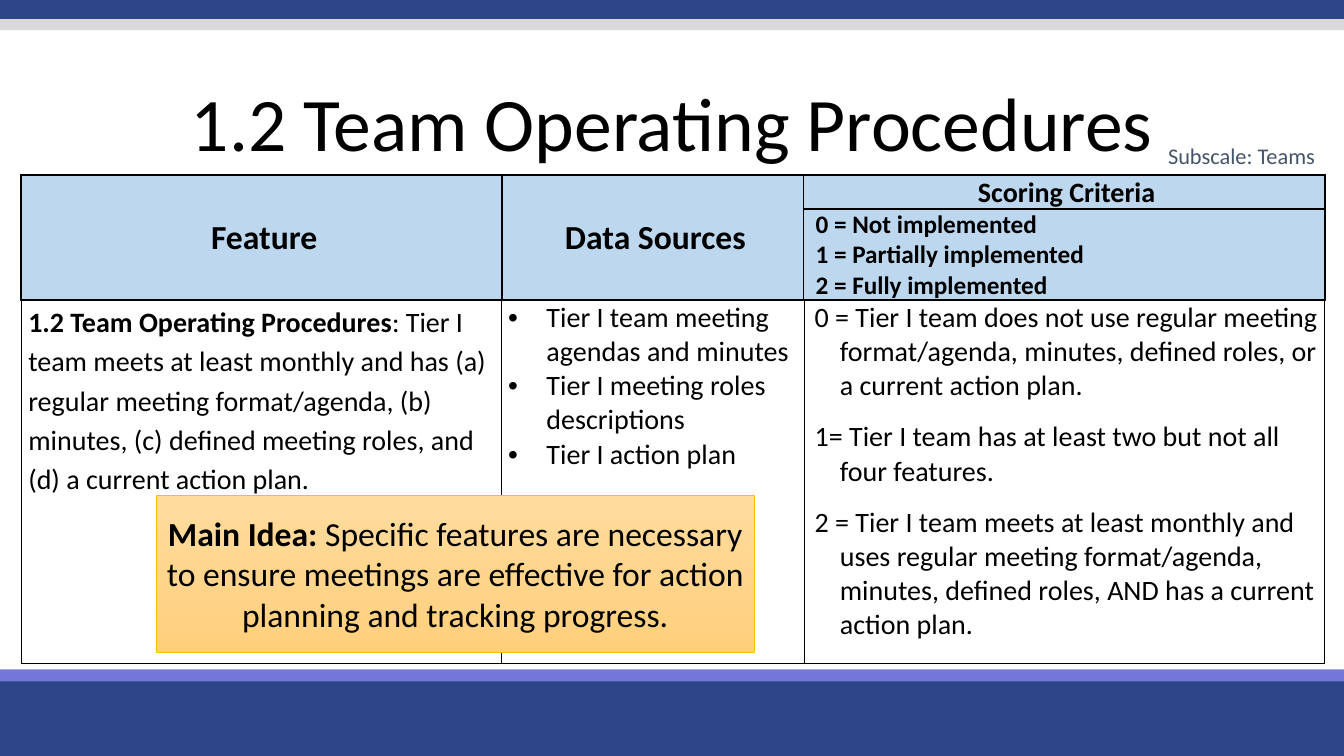
"""Build the slide on team operating procedures with its scoring table."""
from lxml import etree
from pptx import Presentation
from pptx.dml.color import RGBColor
from pptx.enum.shapes import MSO_SHAPE
from pptx.enum.text import MSO_ANCHOR, PP_ALIGN
from pptx.oxml.ns import qn
from pptx.util import Inches, Pt

RECTANGLE = MSO_SHAPE.RECTANGLE
TOP, MIDDLE = MSO_ANCHOR.TOP, MSO_ANCHOR.MIDDLE
LEFT, CENTER, RIGHT = PP_ALIGN.LEFT, PP_ALIGN.CENTER, PP_ALIGN.RIGHT
NAVY = RGBColor(0x2E, 0x44, 0x88)
VIOLET = RGBColor(0x74, 0x76, 0xDA)
SILVER = RGBColor(0xD9, 0xD9, 0xD9)
BLACK = RGBColor(0, 0, 0)
WHITE = RGBColor(0xFF, 0xFF, 0xFF)
SKY = RGBColor(0xBD, 0xD7, 0xEE)
SLATE = RGBColor(0x44, 0x54, 0x6A)
GOLD = RGBColor(0xFF, 0xC0, 0)
PEACH = RGBColor(0xFF, 0xDB, 0x9E)
APRICOT = RGBColor(0xFF, 0xD0, 0x7C)
FONT = "Calibri"
SLIDE_WIDTH, SLIDE_HEIGHT = Inches(13.33), Inches(7.5)
TABLE_LEFT = 1.58
HEADING_INDENT = (0.36, -0.31)
BULLET_INDENT = (0.38, -0.38)
SCORE_INDENT = (0.28, -0.25)

BANDS = [
    (89.33, 10.67, NAVY),
    (88.53, 1.6, VIOLET),
    (0, 2.53, NAVY),
    (2.53, 1.47, SILVER),
]
LEVELS = ["0 = Not implemented", "1 = Partially implemented", "2 = Fully implemented"]
FEATURE = [
    ("1.2 Team Operating Procedures", True),
    (": Tier I team meets at least monthly and has (a) regular meeting format/agenda, "
     "(b) minutes, (c) defined meeting roles, and (d) a current action plan.", False),
]
SOURCES = [
    "Tier I team meeting agendas and minutes",
    "Tier I meeting roles descriptions",
    "Tier I action plan",
]
SCORES = [
    "0 = Tier I team does not use regular meeting format/agenda, minutes, defined roles, "
    "or a current action plan.",
    "1= Tier I team has at least two but not all four features.",
    "2 = Tier I team meets at least monthly and uses regular meeting format/agenda, "
    "minutes, defined roles, AND has a current action plan.",
]
MAIN_IDEA = [
    ("Main Idea: ", True),
    ("Specific features are necessary to ensure meetings are effective for action "
     "planning and tracking progress.", False),
]


def across(percent):
    """Turn a percentage of the slide's width into a length."""
    return round(SLIDE_WIDTH * percent / 100)


def down(percent):
    """Turn a percentage of the slide's height into a length."""
    return round(SLIDE_HEIGHT * percent / 100)


def place(left, top, width, height):
    """Turn four percentages into a position and a size."""
    return across(left), down(top), across(width), down(height)


def write(frame, lines, size, color=BLACK, bold=None, align=LEFT, indent=None,
          bullet=None, spacing=None, after=None):
    """Fill a text frame with lines, each a string or a list of (text, bold) runs."""
    for number, line in enumerate(lines):
        paragraph = frame.add_paragraph() if number else frame.paragraphs[0]
        if indent:
            properties = paragraph._p.get_or_add_pPr()
            properties.set("marL", str(Inches(indent[0])))
            properties.set("indent", str(Inches(indent[1])))
        if bullet:
            etree.SubElement(properties, qn("a:buFont")).set("typeface", "Arial")
            etree.SubElement(properties, qn("a:buChar")).set("char", bullet)
        paragraph.alignment = align
        if spacing:
            paragraph.line_spacing = spacing
        if after:
            paragraph.space_after = Pt(after)
        font = paragraph.font
        font.name, font.size, font.bold = FONT, Pt(size), bold
        font.color.rgb = color
        runs = [(line, None)] if isinstance(line, str) else line
        for text, weight in runs:
            run = paragraph.add_run()
            run.text = text
            if weight is not None:
                run.font.bold = weight


def add_band(slide, top, height, color):
    """Draw a plain stripe over the whole width of the slide."""
    band = slide.shapes.add_shape(RECTANGLE, *place(0, top, 100, height))
    band.shadow.inherit = False
    band.fill.solid()
    band.fill.fore_color.rgb = color
    band.line.fill.background()


def add_label(slide, box, text, size, **style):
    """Add a wrapping text box with one line."""
    frame = slide.shapes.add_textbox(*place(*box)).text_frame
    frame.word_wrap = True
    write(frame, [text], size, **style)


def style_cell(cell, fill, border):
    """Give a cell its borders, fill and margins."""
    properties = cell._tc.get_or_add_tcPr()
    for side in ("a:lnL", "a:lnR", "a:lnT", "a:lnB"):
        edge = etree.SubElement(properties, qn(side), w=str(Pt(border)))
        paint = etree.SubElement(edge, qn("a:solidFill"))
        etree.SubElement(paint, qn("a:srgbClr"), val=str(BLACK))
    cell.fill.solid()
    cell.fill.fore_color.rgb = fill
    cell.margin_left = cell.margin_right = Inches(0.07)
    cell.margin_top = cell.margin_bottom = 0


def add_grid(slide, top, columns, rows, fill, border):
    """Add a table whose columns and rows are shares of the slide."""
    box = place(TABLE_LEFT, top, sum(columns), sum(rows))
    table = slide.shapes.add_table(len(rows), len(columns), *box).table
    table.first_row = table.horz_banding = False
    for column, share in zip(table.columns, columns):
        column.width = across(share)
    for row, share in zip(table.rows, rows):
        row.height = down(share)
    for cell in table.iter_cells():
        style_cell(cell, fill, border)
    return table


def add_headings(slide):
    """Add the blue heading table with its merged cells."""
    table = add_grid(slide, 23.2, (35.78, 22.43, 38.78), (4.4, 11.2), SKY, 1.5)
    for column in range(2):
        table.cell(0, column).merge(table.cell(1, column))
    headings = [("Feature", 24), ("Data Sources", 24), ("Scoring Criteria", 20)]
    for column, (heading, size) in enumerate(headings):
        cell = table.cell(0, column)
        cell.vertical_anchor = MIDDLE
        write(cell.text_frame, [heading], size, bold=True, align=CENTER,
              indent=HEADING_INDENT)
    write(table.cell(1, 2).text_frame, LEVELS, 18, bold=True, indent=HEADING_INDENT)


def add_criteria(slide):
    """Add the table with the feature, its sources and its scores."""
    table = add_grid(slide, 39.73, (35.71, 22.58, 38.71), (48,), WHITE, 1)
    feature, sources, scores = (cell.text_frame for cell in table.iter_cells())
    write(feature, [FEATURE], 20, spacing=1.15)
    write(sources, SOURCES, 20, indent=BULLET_INDENT, bullet="•")
    write(scores, SCORES, 20, indent=SCORE_INDENT, after=12)


def add_main_idea(slide):
    """Add the shaded box with the main idea."""
    idea = slide.shapes.add_shape(RECTANGLE, *place(11.63, 65.47, 44.49, 20.8))
    idea.shadow.inherit = False
    idea.fill.gradient()
    idea.fill.gradient_angle = 270
    for stop, color in zip(idea.fill.gradient_stops, (PEACH, APRICOT)):
        stop.color.rgb = color
    idea.line.color.rgb = GOLD
    idea.line.width = Pt(0.5)
    idea.text_frame.vertical_anchor = MIDDLE
    idea.text_frame.word_wrap = True
    write(idea.text_frame, [MAIN_IDEA], 24, align=CENTER)


def main():
    """Build and save the slide."""
    deck = Presentation()
    deck.slide_width, deck.slide_height = SLIDE_WIDTH, SLIDE_HEIGHT
    slide = deck.slides.add_slide(deck.slide_layouts[6])
    for band in BANDS:
        add_band(slide, *band)
    add_label(slide, (0, 10.8, 100, 10.67), "1.2 Team Operating Procedures", 54,
              align=CENTER, spacing=0.9)
    add_headings(slide)
    add_criteria(slide)
    add_main_idea(slide)
    add_label(slide, (84.55, 18.13, 14.03, 4.93), "Subscale: Teams", 16,
              color=SLATE, align=RIGHT)
    deck.save("out.pptx")


if __name__ == "__main__":
    main()
